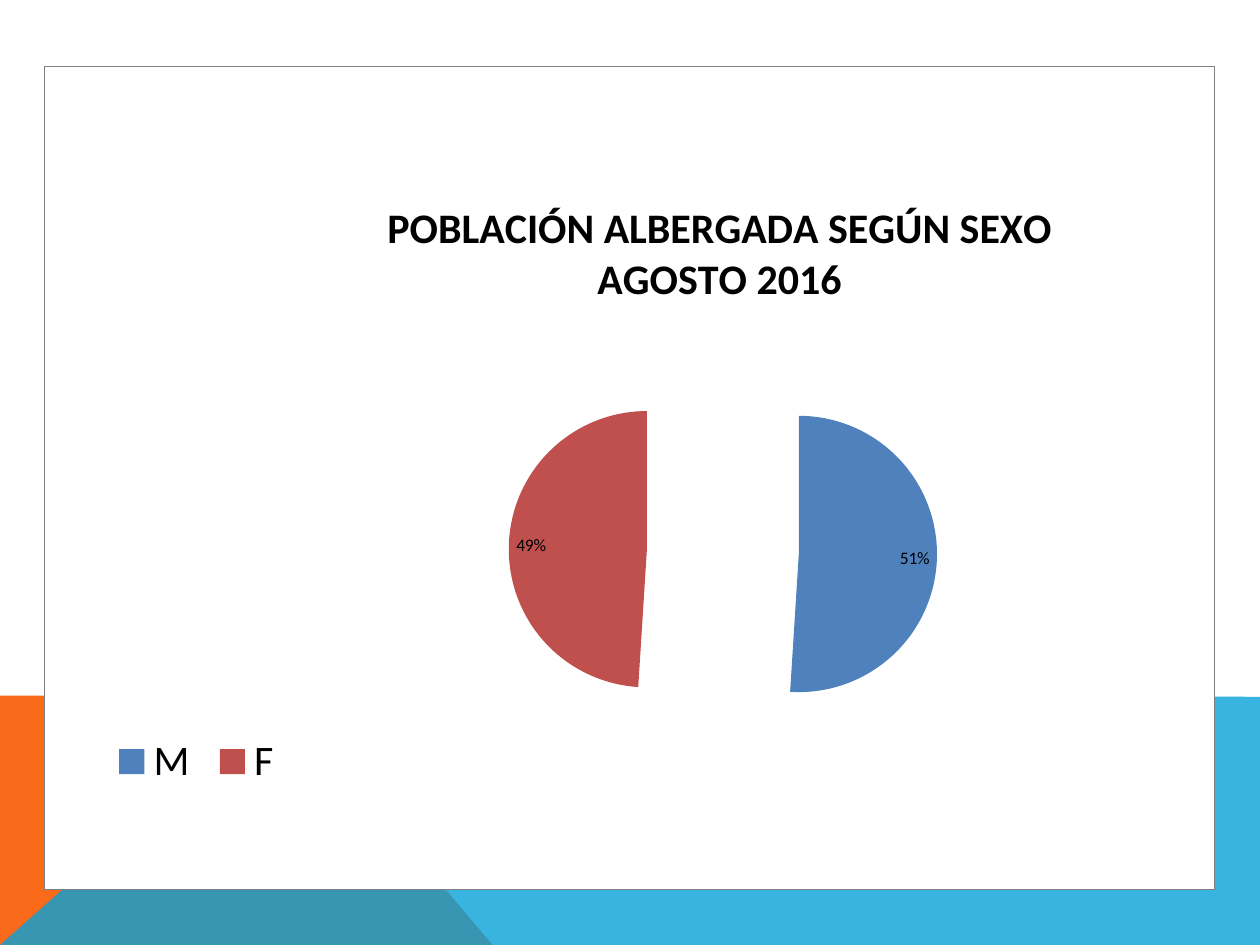
import pptx
import pptx.chart.data
import pptx.dml.color
import pptx.enum.chart
import pptx.oxml
import pptx.oxml.ns
import pptx.util
from pptx.util import Inches

RGBColor = pptx.dml.color.RGBColor
ORANGE = RGBColor(0xF9, 0x6A, 0x1B)
SKY = RGBColor(0x08, 0xA1, 0xD9)
BLUE = RGBColor(0x4F, 0x81, 0xBD)
RED = RGBColor(0xC0, 0x50, 0x4D)
BLACK = RGBColor(0, 0, 0)
NAMESPACES = pptx.oxml.ns.nsdecls("c", "a")
qn = pptx.oxml.ns.qn


def add_band(shapes, corners, color):
    points = [(Inches(x), Inches(y)) for x, y in corners]
    builder = shapes.build_freeform(*points[0])
    builder.add_line_segments(points[1:], close=True)
    band = builder.convert_to_shape()
    band.shadow.inherit = False
    band.fill.solid()
    band.fill.fore_color.rgb = color
    band.line.fill.background()
    return band


def place(part, index, target, **position):
    """Give a chart part a manual layout, in fractions of the chart."""
    for old in part.findall(qn("c:layout")):
        part.remove(old)
    modes = "".join(f'<c:{axis}Mode val="edge"/>' for axis in "xy")
    values = "".join(f'<c:{key} val="{value}"/>' for key, value in position.items())
    part.insert(index, pptx.oxml.parse_xml(
        f"<c:layout {NAMESPACES}><c:manualLayout>{target}{modes}{values}"
        "</c:manualLayout></c:layout>"))


presentation = pptx.Presentation()
presentation.slide_width = Inches(10)
presentation.slide_height = Inches(7.5)
slide = presentation.slides.add_slide(presentation.slide_layouts[6])

add_band(slide.shapes, [(0, 7.5), (0, 5.52), (2.23, 5.52), (3.91, 7.5)], ORANGE)
sky_band = add_band(slide.shapes, [(0, 7.5), (2.23, 5.52), (10, 5.53), (10, 7.5)], SKY)
sky_color = sky_band.fill._xPr.find(qn("a:solidFill"))[0]
sky_color.append(pptx.oxml.parse_xml(f'<a:alpha {NAMESPACES} val="80000"/>'))

population = pptx.chart.data.CategoryChartData()
population.categories = ["M", "F"]
population.add_series("Series 1", [51, 49])
chart = slide.shapes.add_chart(
    pptx.enum.chart.XL_CHART_TYPE.PIE,
    Inches(0.35), Inches(0.52), Inches(9.29), Inches(6.54), population).chart
chart.font.name = "Arial"
chart.font.size = pptx.util.Pt(10)
chart.font.color.rgb = BLACK

title = chart.chart_title.text_frame
title.text = "POBLACIÓN ALBERGADA SEGÚN SEXO\nAGOSTO 2016"
for paragraph in title.paragraphs:
    paragraph.font.name = "Calibri"
    paragraph.font.size = pptx.util.Pt(24)
    paragraph.font.bold = True
    paragraph.font.color.rgb = BLACK
chart.chart_title.include_in_layout = False

chart.has_legend = True
chart.legend.position = pptx.enum.chart.XL_LEGEND_POSITION.LEFT
chart.legend.include_in_layout = False
chart.legend.font.name = "Calibri"
chart.legend.font.size = pptx.util.Pt(24)
chart.legend.font.color.rgb = BLACK

pie = chart.plots[0]
pie.vary_by_categories = True
pie.has_data_labels = True
labels = pie.data_labels
labels.show_percentage = True
labels.show_value = False
labels.number_format = "0%"
labels.number_format_is_linked = False
labels.position = pptx.enum.chart.XL_LABEL_POSITION.INSIDE_END
labels.font.name = "Calibri"
labels.font.size = pptx.util.Pt(10)
labels.font.color.rgb = BLACK

sexes = pie.series[0]
for index, color in enumerate([BLUE, RED]):
    slice_fill = sexes.points[index].format.fill
    slice_fill.solid()
    slice_fill.fore_color.rgb = color
sexes._element.find(qn("c:dPt")).addprevious(
    pptx.oxml.parse_xml(f'<c:explosion {NAMESPACES} val="55"/>'))

chart_part = chart._chartSpace.find(qn("c:chart"))
place(chart_part.find(qn("c:title")), 1, "", x=0.29, y=0.16)
place(chart_part.find(qn("c:legend")), 1, "", x=0.05, y=0.8, w=0.16, h=0.09)
place(chart_part.find(qn("c:plotArea")), 0, '<c:layoutTarget val="inner"/>',
      x=0.25, y=0.33, w=0.66, h=0.52)
chart_part.addnext(pptx.oxml.parse_xml(
    f'<c:spPr {NAMESPACES}><a:solidFill><a:srgbClr val="FFFFFF"/></a:solidFill>'
    '<a:ln w="3175"><a:solidFill><a:srgbClr val="808080"/></a:solidFill></a:ln></c:spPr>'))

presentation.save("out.pptx")
